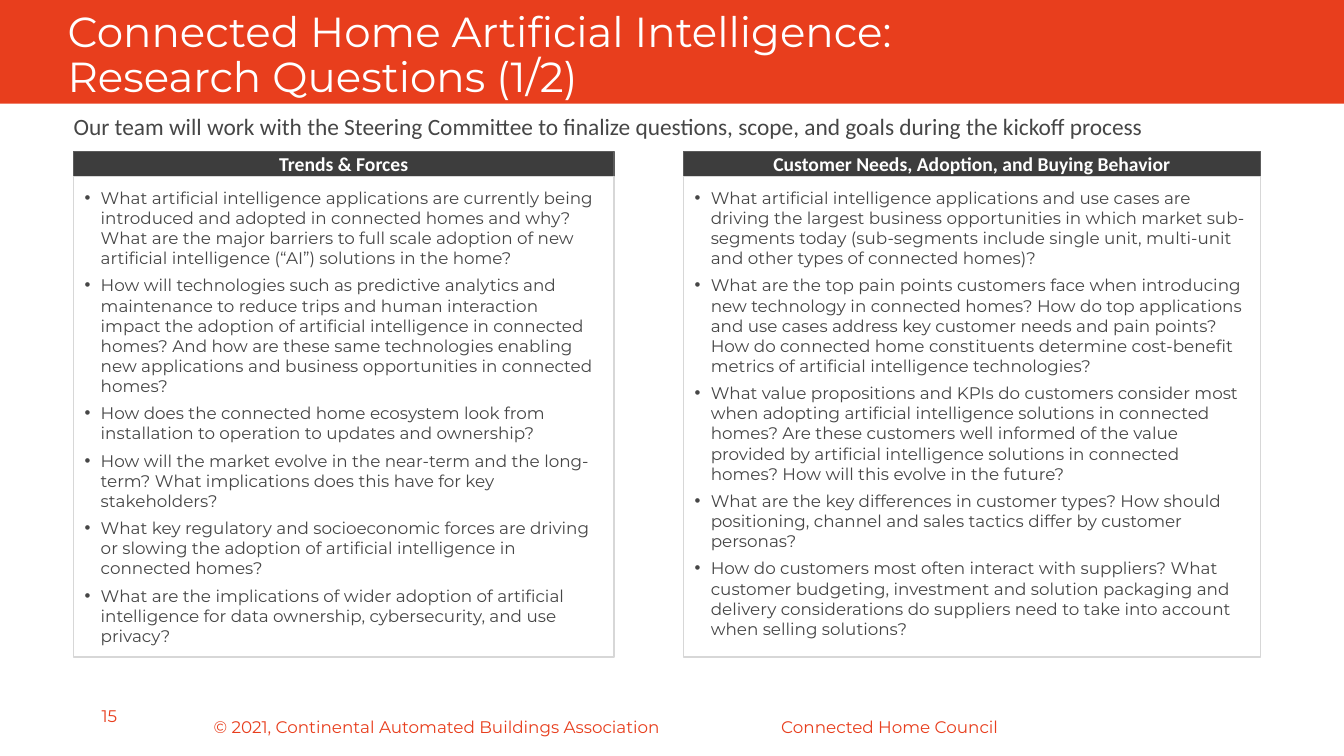
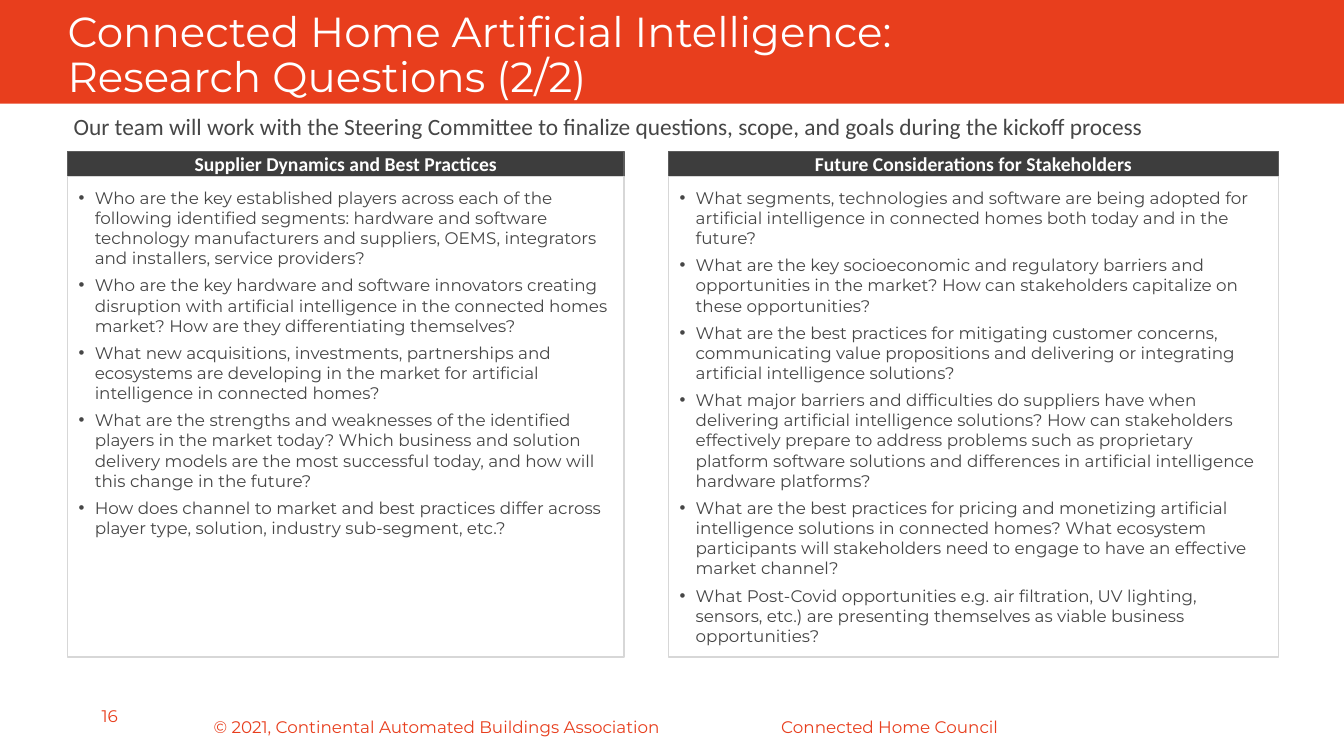
from dataclasses import dataclass
from lxml.etree import SubElement as Sub
from pptx import Presentation
from pptx.dml.color import RGBColor as Rgb
from pptx.enum.shapes import MSO_SHAPE as Kind
from pptx.enum.text import MSO_ANCHOR as Anchor, MSO_AUTO_SIZE as Fit, PP_ALIGN as Align
from pptx.oxml.ns import qn
from pptx.util import Inches, Pt


@dataclass(frozen=True)
class Theme:
    red: str = "E83E1D"
    dark: str = "3D3D3D"
    edge: str = "5C5C5C"
    pale: str = "D7D7D7"
    ink: str = "464646"
    white: str = "FFFFFF"
    main: str = "Montserrat"
    alt: str = "Calibri"
    title: float = 30
    lead: float = 16.7
    head: float = 14
    body: float = 12


T = Theme()
TOP, HEAD, BODY = 1.5, 0.25, 4.77
DENT = 0.16
PADS = (0.11, 0.11, 0.11, 0.06)
LEAD = "Our team will work with the Steering Committee to finalize questions, scope, and goals during the kickoff process"
NOTES = [
    (2.02, 4.67, "© 2021, Continental Automated Buildings Association"),
    (7.65, 2.39, "Connected Home Council"),
]

PAGES = [
    [
        (0.73, 5.36, "Trends & Forces", [
            "What artificial intelligence applications are currently being introduced and adopted in connected homes and why? What are the major barriers to full scale adoption of new artificial intelligence (“AI”) solutions in the home?",
            "How will technologies such as predictive analytics and maintenance to reduce trips and human interaction impact the adoption of artificial intelligence in connected homes? And how are these same technologies enabling new applications and business opportunities in connected homes?",
            "How does the connected home ecosystem look from installation to operation to updates and ownership?",
            "How will the market evolve in the near-term and the long-term? What implications does this have for key stakeholders?",
            "What key regulatory and socioeconomic forces are driving or slowing the adoption of artificial intelligence in connected homes?",
            "What are the implications of wider adoption of artificial intelligence for data ownership, cybersecurity, and use privacy?",
        ]),
        (6.78, 5.72, "Customer Needs, Adoption, and Buying Behavior", [
            "What artificial intelligence applications and use cases are driving the largest business opportunities in which market sub-segments today (sub-segments include single unit, multi-unit and other types of connected homes)?",
            "What are the top pain points customers face when introducing new technology in connected homes? How do top applications and use cases address key customer needs and pain points? How do connected home constituents determine cost-benefit metrics of artificial intelligence technologies?",
            "What value propositions and KPIs do customers consider most when adopting artificial intelligence solutions in connected homes? Are these customers well informed of the value provided by artificial intelligence solutions in connected homes? How will this evolve in the future?",
            "What are the key differences in customer types? How should positioning, channel and sales tactics differ by customer personas?",
            "How do customers most often interact with suppliers? What customer budgeting, investment and solution packaging and delivery considerations do suppliers need to take into account when selling solutions?",
        ]),
    ],
    [
        (0.67, 5.52, "Supplier Dynamics and Best Practices", [
            "Who are the key established players across each of the following identified segments: hardware and software technology manufacturers and suppliers, OEMS, integrators and installers, service providers?",
            "Who are the key hardware and software innovators creating disruption with artificial intelligence in the connected homes market? How are they differentiating themselves?",
            "What new acquisitions, investments, partnerships and ecosystems are developing in the market for artificial intelligence in connected homes?",
            "What are the strengths and weaknesses of the identified players in the market today? Which business and solution delivery models are the most successful today, and how will this change in the future?",
            "How does channel to market and best practices differ across player type, solution, industry sub-segment, etc.?",
        ]),
        (6.63, 6.05, "Future Considerations for Stakeholders", [
            "What segments, technologies and software are being adopted for artificial intelligence in connected homes both today and in the future?",
            "What are the key socioeconomic and regulatory barriers and opportunities in the market? How can stakeholders capitalize on these opportunities?",
            "What are the best practices for mitigating customer concerns, communicating value propositions and delivering or integrating artificial intelligence solutions?",
            "What major barriers and difficulties do suppliers have when delivering artificial intelligence solutions? How can stakeholders effectively prepare to address problems such as proprietary platform software solutions and differences in artificial intelligence hardware platforms?",
            "What are the best practices for pricing and monetizing artificial intelligence solutions in connected homes? What ecosystem participants will stakeholders need to engage to have an effective market channel?",
            "What Post-Covid opportunities e.g. air filtration, UV lighting, sensors, etc.) are presenting themselves as viable business opportunities?",
        ]),
    ],
]


def style(para, size, color, face=T.main, bold=False):
    font = para.font
    font.name, font.size, font.bold = face, Pt(size), bold
    font.color.rgb = Rgb.from_string(color)


def setup(frame, pads, anchor=Anchor.TOP):
    frame.word_wrap = True
    frame.auto_size = Fit.NONE
    frame.vertical_anchor = anchor
    (frame.margin_left, frame.margin_top,
     frame.margin_right, frame.margin_bottom) = map(Inches, pads)


def rect(shapes, area, fill, line=None):
    box = shapes.add_shape(Kind.RECTANGLE, *map(Inches, area))
    box.shadow.inherit = False
    box.fill.solid()
    box.fill.fore_color.rgb = Rgb.from_string(fill)
    if line:
        box.line.color.rgb = Rgb.from_string(line)
        box.line.width = Pt(1)
    else:
        box.line.fill.background()
    return box


def label(shapes, area, text, size, color, face=T.main,
          pads=(0.1, 0.05, 0.1, 0.05), anchor=Anchor.TOP, space=None):
    box = shapes.add_textbox(*map(Inches, area))
    setup(box.text_frame, pads, anchor)
    para = box.text_frame.paragraphs[0]
    para.text = text
    para.line_spacing = space
    style(para, size, color, face)
    return box


def bullet(para, text):
    para.text = text
    para.alignment = Align.LEFT
    para.space_after = Pt(5)
    props = para._p.get_or_add_pPr()
    props.set("marL", str(Inches(DENT)))
    props.set("indent", str(-Inches(DENT)))
    Sub(props, qn("a:buFont")).set("typeface", "Arial")
    Sub(props, qn("a:buChar")).set("char", "•")
    style(para, T.body, T.ink)


def panel(slide, left, width, head, items):
    shapes = slide.shapes.add_group_shape().shapes
    bar = rect(shapes, (left, TOP, width, HEAD), T.dark, T.edge)
    setup(bar.text_frame, (0, 0, 0, 0), Anchor.MIDDLE)
    para = bar.text_frame.paragraphs[0]
    para.text = head
    para.alignment = Align.CENTER
    style(para, T.head, T.white, T.alt, True)
    box = rect(shapes, (left, TOP + HEAD, width, BODY), T.white, T.pale)
    frame = box.text_frame
    setup(frame, PADS)
    for num, text in enumerate(items):
        bullet(frame.add_paragraph() if num else frame.paragraphs[0], text)


def brand(layout, slide):
    parts = [rect(slide.shapes, (0, 0, 13.33, 1.03), T.red)]
    for left, width, text in NOTES:
        parts.append(label(slide.shapes, (left, 7.01, width, 0.4), text,
                           T.body, T.red, anchor=Anchor.MIDDLE))
    for num, part in enumerate(parts, 20):
        part.element.nvSpPr.cNvPr.id = num
        layout.shapes.element.append(part.element)


def heading(slide, text):
    title = slide.shapes.title
    title.left, title.top, title.width, title.height = map(
        Inches, (0.67, 0.11, 12.27, 0.42))
    setup(title.text_frame, (0, 0, 0, 0))
    para = title.text_frame.paragraphs[0]
    para.text = text
    para.alignment = Align.LEFT
    para.line_spacing = 0.9
    style(para, T.title, T.white)


def main():
    deck = Presentation()
    deck.slide_width, deck.slide_height = Inches(13.33), Inches(7.5)
    layout = deck.slide_layouts[5]
    for num, panels in enumerate(PAGES, 1):
        slide = deck.slides.add_slide(layout)
        if num == 1:
            brand(layout, slide)
        heading(slide, f"Connected Home Artificial Intelligence:\vResearch Questions ({num}/{len(PAGES)})")
        label(slide.shapes, (0.73, 1.14, 12.01, 0.44), LEAD, T.lead, T.ink,
              T.alt, (0, 0, 0, 0), space=0.9)
        for item in panels:
            panel(slide, *item)
        label(slide.shapes, (0.91, 6.95, 0.68, 0.39), str(14 + num), T.body, T.red)
    deck.save("out.pptx")


if __name__ == "__main__":
    main()
